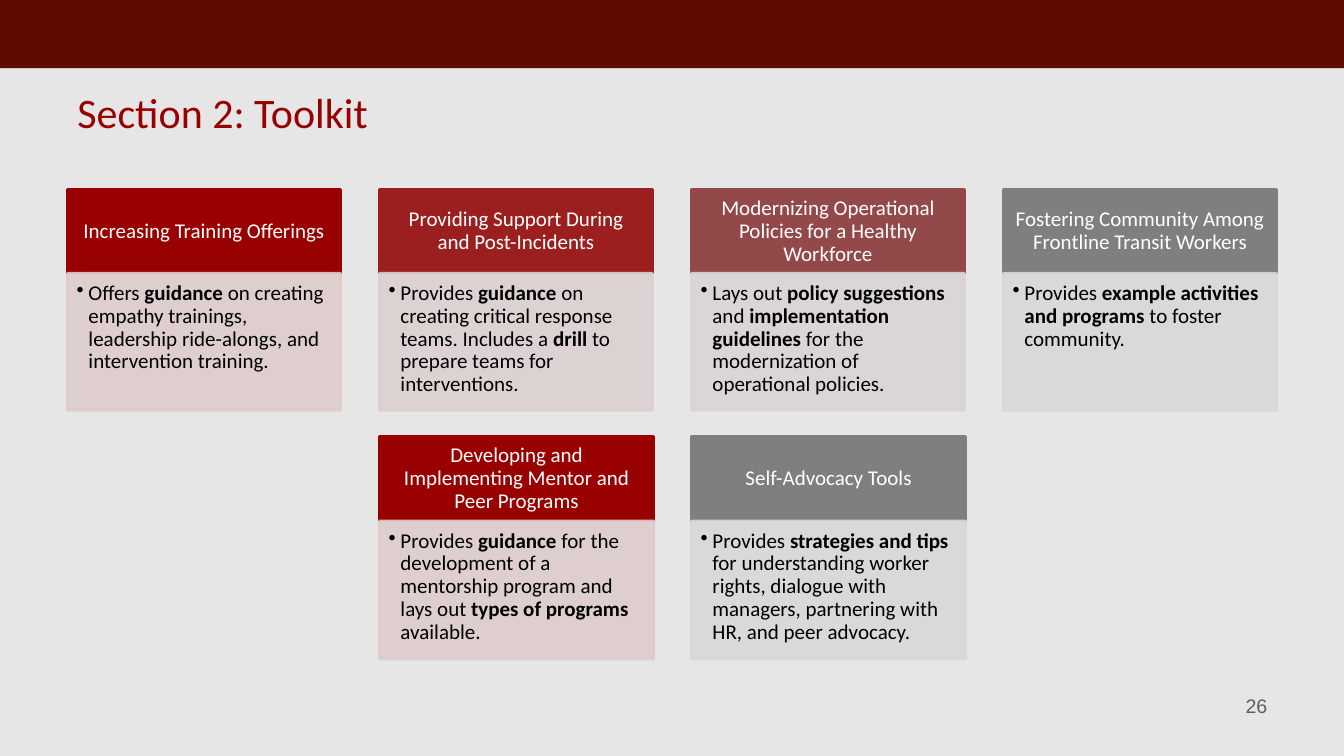
"""Build the "Section 2: Toolkit" slide: six cards in two centred rows."""
from dataclasses import dataclass

import lxml.etree
import pptx
import pptx.dml.color
import pptx.enum.shapes
import pptx.enum.text
import pptx.oxml.ns
import pptx.util

Cm = pptx.util.Cm
ALIGN = pptx.enum.text.PP_ALIGN
ANCHOR = pptx.enum.text.MSO_ANCHOR


@dataclass(frozen=True)
class Theme:
    background: str = "E7E6E6"
    banner: str = "5E0C02"
    title: str = "990000"
    heading: str = "FFFFFF"
    body: str = "000000"
    number: str = "5F5F5F"
    font: str = "Calibri"
    number_font: str = "Arial"
    title_size: int = 30
    card_size: int = 15
    number_size: int = 14


theme = Theme()


def add_block(left, top, width, height, color, opacity=100):
    block = slide.shapes.add_shape(
        pptx.enum.shapes.MSO_SHAPE.RECTANGLE, Cm(left), Cm(top), Cm(width), Cm(height))
    block.shadow.inherit = False
    block.line.width = pptx.util.Pt(2)
    block.fill.solid()
    for paint in (block.fill, block.line.fill):
        paint.solid()
        paint.fore_color.rgb = pptx.dml.color.RGBColor.from_string(color)
    if opacity < 100:
        for tint in block._element.spPr.iter(pptx.oxml.ns.qn("a:srgbClr")):
            lxml.etree.SubElement(tint, pptx.oxml.ns.qn("a:alpha"), val=str(opacity * 1000))
    return block


def write(shape, text, size, color, align, anchor, insets=None, font=theme.font, bullet=False):
    frame = shape.text_frame
    frame.word_wrap = True
    frame.vertical_anchor = anchor
    if insets:
        (frame.margin_left, frame.margin_top,
         frame.margin_right, frame.margin_bottom) = [Cm(inset) for inset in insets]
    paragraph = frame.paragraphs[0]
    paragraph.alignment = align
    paragraph.line_spacing = 0.9 if insets else 1.0
    if bullet:
        paragraph.level = 1
        properties = paragraph._p.get_or_add_pPr()
        properties.set("marL", str(Cm(0.3)))
        properties.set("indent", str(Cm(-0.3)))
        lxml.etree.SubElement(properties, pptx.oxml.ns.qn("a:buChar"), char="•")
    paragraph.font.name = font
    paragraph.font.size = pptx.util.Pt(size)
    paragraph.font.color.rgb = pptx.dml.color.RGBColor.from_string(color)
    for index, part in enumerate(text.split("**")):
        run = paragraph.add_run()
        run.text = part
        if index % 2:
            run.font.bold = True


deck = pptx.Presentation()
deck.slide_width, deck.slide_height = Cm(33.86), Cm(19.05)
slide = deck.slides.add_slide(deck.slide_layouts[6])
slide.background.fill.solid()
slide.background.fill.fore_color.rgb = pptx.dml.color.RGBColor.from_string(theme.background)

banner = add_block(0, 0, 33.86, 1.72, theme.banner)
banner.line.fill.background()

title = slide.shapes.add_textbox(Cm(1.7), Cm(1.7), Cm(30.48), Cm(2.24))
write(title, "Section 2: Toolkit", theme.title_size, theme.title, ALIGN.LEFT, ANCHOR.MIDDLE)

card_rows = [
    (4.78, 0, 6.88, 2.11, 3.45, [
        ("990000", "DECCCC", "Increasing Training Offerings",
         "Offers **guidance** on creating empathy trainings, leadership ride-alongs, "
         "and intervention training."),
        ("9C1F1F", "DBD0D0", "Providing Support During and Post-Incidents",
         "Provides **guidance** on creating critical response teams. Includes a **drill** "
         "to prepare teams for interventions."),
        ("934949", "DAD5D5", "Modernizing Operational Policies for a Healthy Workforce",
         "Lays out **policy suggestions **and **implementation guidelines **for the "
         "modernization of operational policies."),
        ("7F7F7F", "D8D8D8", "Fostering Community Among Frontline Transit Workers",
         "Provides** example activities and programs **to foster community."),
    ]),
    (11, 1, 6.91, 2.13, 3.48, [
        ("990000", "DECCCC", "Developing and Implementing Mentor and Peer Programs",
         "Provides **guidance** for the development of a mentorship program and lays out "
         "**types of programs** available."),
        ("7F7F7F", "D8D8D8", "Self-Advocacy Tools",
         "Provides **strategies and tips **for understanding worker rights, dialogue with "
         "managers, partnering with HR, and peer advocacy."),
    ]),
]
first_left, column_pitch = 1.7, 7.86
for top, first_column, width, heading_height, body_height, cards in card_rows:
    for column, (heading_color, body_color, heading_text, body_text) in enumerate(cards, first_column):
        left = first_left + column * column_pitch
        heading = add_block(left, top, width, heading_height, heading_color)
        write(heading, heading_text, theme.card_size, theme.heading,
              ALIGN.CENTER, ANCHOR.MIDDLE, (0.3, 0.17, 0.3, 0.17))
        body = add_block(left, top + heading_height, width, body_height, body_color, opacity=90)
        write(body, body_text, theme.card_size, theme.body,
              ALIGN.LEFT, ANCHOR.TOP, (0.23, 0.23, 0.3, 0.33), bullet=True)

page_number = slide.shapes.add_textbox(Cm(24.28), Cm(17.35), Cm(7.9), Cm(1.32))
write(page_number, "26", theme.number_size, theme.number, ALIGN.RIGHT, ANCHOR.TOP,
      font=theme.number_font)

deck.save("out.pptx")
